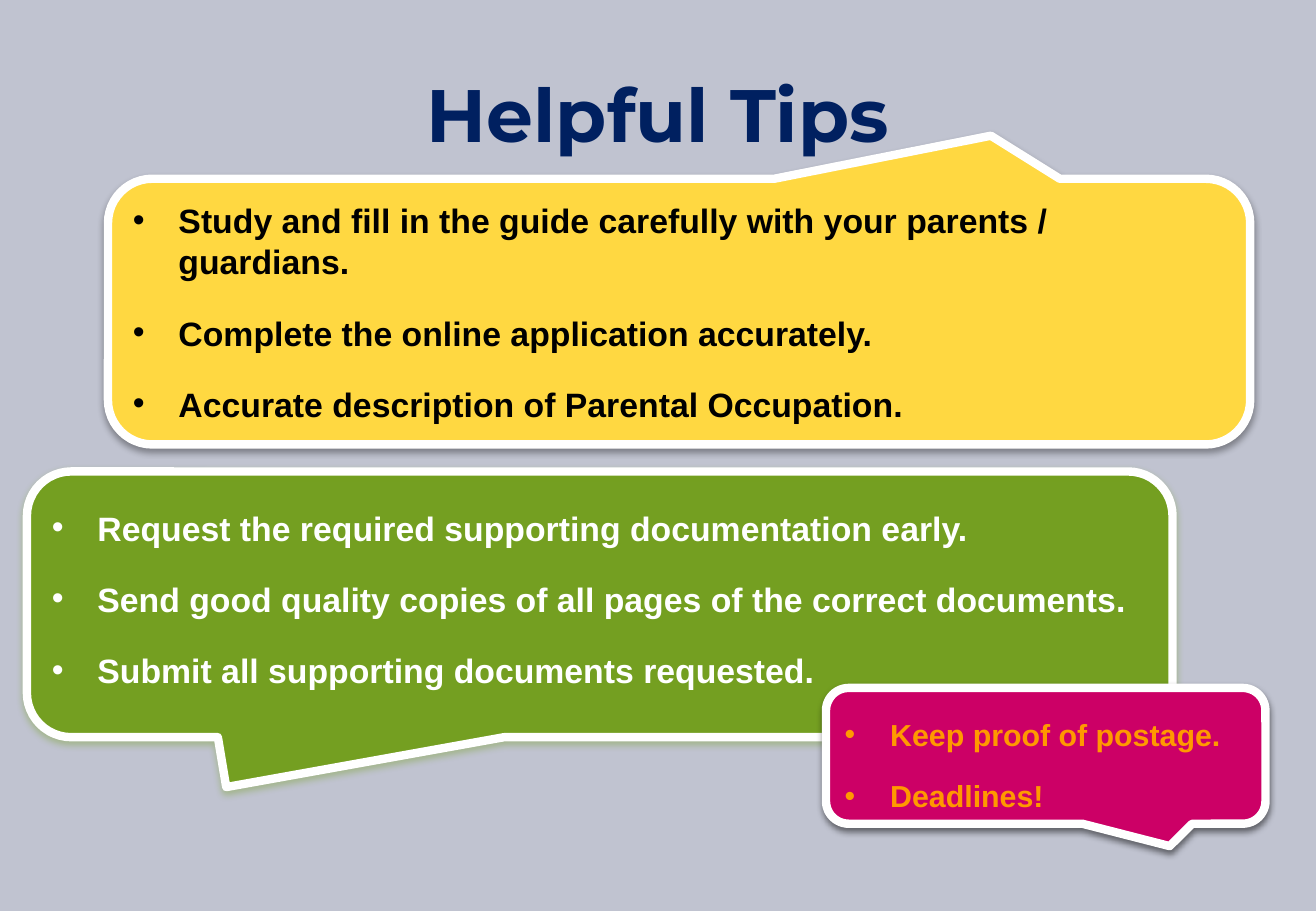
"""Builds the Helpful Tips slide with three callouts of bulleted advice."""
from lxml import etree
from pptx import Presentation
from pptx.dml.color import RGBColor
from pptx.enum.shapes import MSO_SHAPE
from pptx.enum.text import MSO_ANCHOR, PP_ALIGN
from pptx.oxml.ns import qn
from pptx.util import Pt


def color(hex_string):
    return RGBColor.from_string(hex_string)


def add_color(parent, hex_string, opacity):
    shade = etree.SubElement(parent, qn("a:srgbClr"), val=hex_string)
    etree.SubElement(shade, qn("a:alpha"), val=str(opacity * 1000))


deck = Presentation()
deck.slide_width, deck.slide_height = Pt(780), Pt(540)
slide = deck.slides.add_slide(deck.slide_layouts[6])
slide.background.fill.solid()
slide.background.fill.fore_color.rgb = color("C0C3D0")

title = slide.shapes.add_textbox(Pt(39), Pt(21.6), Pt(702), Pt(90)).text_frame
title.word_wrap = True
title.vertical_anchor = MSO_ANCHOR.MIDDLE
heading = title.paragraphs[0]
heading.text = "Helpful Tips"
heading.alignment = PP_ALIGN.CENTER
heading.font.name = "Montserrat"
heading.font.size = Pt(44)
heading.font.bold = True
heading.font.color.rgb = color("002060")

callouts = [
    {"box": (64, 106, 677, 157.5), "tail": (0.273, -0.662),
     "fill": "FFD841", "opacity": 100, "shadow": ("000000", 35),
     "ink": "000000", "size": 20, "spacing": (1, 0.7, 0.7), "gap": 25.4,
     "tips": ["Study and fill in the guide carefully with your parents / guardians.",
              "Complete the online application accurately.",
              "Accurate description of Parental Occupation."]},
    {"box": (16, 279.5, 679, 157.5), "tail": (-0.326, 0.688),
     "fill": "669900", "opacity": 78, "shadow": ("669900", 33),
     "ink": "FFFFFF", "size": 20, "spacing": (0.7, 0.7, 0.7), "gap": 25.4,
     "tips": ["Request the required supporting documentation early.",
              "Send good quality copies of all pages of the correct documents.",
              "Submit all supporting documents requested."]},
    {"box": (489.6, 407.8, 260.5, 80.5), "tail": (0.282, 0.665),
     "fill": "CC0066", "opacity": 100, "shadow": ("000000", 50),
     "ink": "FF9900", "size": 18, "spacing": (1.5, 1.5), "gap": 4,
     "tips": ["Keep proof of postage.", "Deadlines!"]},
]

for callout in callouts:
    bubble = slide.shapes.add_shape(
        MSO_SHAPE.ROUNDED_RECTANGULAR_CALLOUT, *map(Pt, callout["box"]))
    bubble.adjustments[0], bubble.adjustments[1] = callout["tail"]
    bubble.adjustments[2] = 0.167
    bubble.line.color.rgb = color("FFFFFF")
    bubble.line.width = Pt(5)
    bubble.fill.solid()
    bubble.fill.fore_color.rgb = color(callout["fill"])
    if callout["opacity"] < 100:
        fill_color = bubble.fill._xPr.find(qn("a:solidFill"))[0]
        etree.SubElement(fill_color, qn("a:alpha"), val=str(callout["opacity"] * 1000))

    bubble.shadow.inherit = False
    effects = bubble.element.spPr.find(qn("a:effectLst"))
    shadow = etree.SubElement(effects, qn("a:outerShdw"), blurRad=str(Pt(4)),
                              dist=str(Pt(2)), dir="5400000", rotWithShape="0")
    add_color(shadow, *callout["shadow"])

    advice = bubble.text_frame
    advice.word_wrap = True
    advice.vertical_anchor = MSO_ANCHOR.MIDDLE
    for index, (wording, spacing) in enumerate(zip(callout["tips"], callout["spacing"])):
        tip = advice.add_paragraph() if index else advice.paragraphs[0]
        tip.text = wording
        tip.alignment = PP_ALIGN.LEFT
        tip.line_spacing = spacing
        tip.space_before = Pt(callout["gap"] if index else 4)
        tip.font.name = "Arial"
        tip.font.size = Pt(callout["size"])
        tip.font.bold = True
        tip.font.color.rgb = color(callout["ink"])
        properties = tip._p.get_or_add_pPr()
        properties.set("marL", str(Pt(27)))
        properties.set("indent", str(Pt(-27)))
        bullet_font = etree.Element(qn("a:buFont"), typeface="Arial")
        bullet = etree.Element(qn("a:buChar"), char="•")
        position = list(properties).index(properties.find(qn("a:defRPr")))
        properties.insert(position, bullet_font)
        properties.insert(position + 1, bullet)

deck.save("out.pptx")
